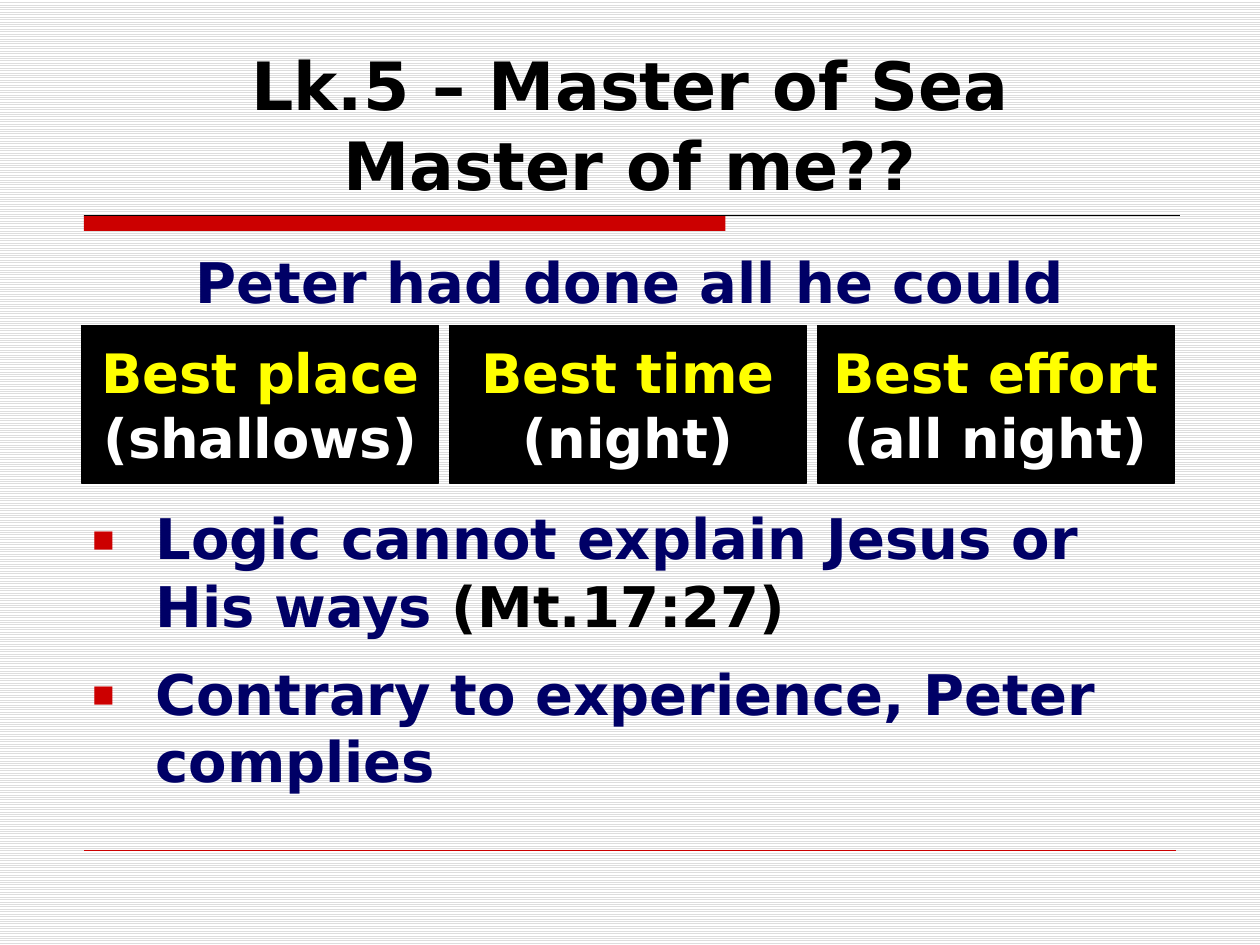
from typing import NamedTuple

from lxml.etree import SubElement
from pptx import Presentation
from pptx.dml.color import RGBColor
from pptx.enum.dml import MSO_PATTERN
from pptx.enum.shapes import MSO_CONNECTOR as CONN, MSO_SHAPE as SHAPE
from pptx.enum.text import MSO_ANCHOR as ANCHOR, PP_ALIGN as ALIGN
from pptx.oxml.ns import qn
from pptx.util import Pt

BLACK = RGBColor(0x00, 0x00, 0x00)
WHITE = RGBColor(0xFF, 0xFF, 0xFF)
STRIPE = RGBColor(0xDD, 0xDD, 0xDD)
RED = RGBColor(0xCC, 0x00, 0x00)
NAVY = RGBColor(0x00, 0x00, 0x66)
YELLOW = RGBColor(0xFF, 0xFF, 0x00)

FONT = {"name": "DejaVu Sans", "bold": True}
CARD_LEFT, CARD_TOP, CARD_PITCH = 46.6, 186, 210.2
CARD_W, CARD_H = 204, 90
HANG = 36.7


class Run(NamedTuple):
    text: str
    color: RGBColor


class Card(NamedTuple):
    best: str
    detail: str


class Bullet(NamedTuple):
    space: float
    runs: list[Run]


CARDS = [
    Card("Best place ", "(shallows)"),
    Card("Best time ", "(night)"),
    Card("Best effort ", "(all night)"),
]
BULLETS = [
    Bullet(108, [Run("Logic cannot explain Jesus or His ways ", NAVY),
                 Run("(Mt.17:27)", BLACK)]),
    Bullet(12, [Run("Contrary to experience, Peter complies", NAVY)]),
]


def add_runs(p, runs: list[Run], size: float) -> None:
    for text, color in runs:
        for i, line in enumerate(text.split("\n")):
            if i:
                p.add_line_break()
            r = p.add_run()
            r.text = line
            for key, value in (FONT | {"size": Pt(size)}).items():
                setattr(r.font, key, value)
            r.font.color.rgb = color


def add_text(s, left: float, top: float, width: float, height: float,
             anchor: ANCHOR):
    tf = s.shapes.add_textbox(Pt(left), Pt(top), Pt(width), Pt(height)).text_frame
    tf.word_wrap = True
    tf.vertical_anchor = anchor
    return tf


def add_rect(s, left: float, top: float, width: float, height: float,
             color: RGBColor):
    sp = s.shapes.add_shape(SHAPE.RECTANGLE, Pt(left), Pt(top), Pt(width), Pt(height))
    sp.shadow.inherit = False
    sp.fill.solid()
    sp.fill.fore_color.rgb = color
    sp.line.fill.background()
    return sp


def add_rule(s, left: float, right: float, y: float, color: RGBColor,
             width: float) -> None:
    cn = s.shapes.add_connector(CONN.STRAIGHT, Pt(left), Pt(y), Pt(right), Pt(y))
    cn.line.color.rgb = color
    cn.line.width = Pt(width)
    SubElement(cn._element.spPr, qn("a:effectLst"))


def add_card(s, index: int, card: Card) -> None:
    sp = add_rect(s, CARD_LEFT + index * CARD_PITCH, CARD_TOP, CARD_W, CARD_H, BLACK)
    sp.line.color.rgb = BLACK
    sp.line.width = Pt(0.75)
    tf = sp.text_frame
    tf.word_wrap = True
    tf.vertical_anchor = ANCHOR.MIDDLE
    p = tf.paragraphs[0]
    p.alignment = ALIGN.CENTER
    add_runs(p, [Run(card.best, YELLOW), Run(card.detail, WHITE)], 31)


def add_bullet(tf, bullet: Bullet) -> None:
    p = tf.add_paragraph()
    p.space_before = Pt(bullet.space)
    pPr = p._p.get_or_add_pPr()
    pPr.set("marL", str(Pt(HANG)))
    pPr.set("indent", str(-Pt(HANG)))
    SubElement(SubElement(pPr, qn("a:buClr")), qn("a:srgbClr"), val=str(RED))
    SubElement(pPr, qn("a:buSzPct"), val="65000")
    SubElement(pPr, qn("a:buFont"), typeface=FONT["name"])
    SubElement(pPr, qn("a:buChar"), char="▪")
    add_runs(p, bullet.runs, 32)


def main() -> None:
    prs = Presentation()
    prs.slide_width, prs.slide_height = Pt(720), Pt(540)
    s = prs.slides.add_slide(prs.slide_layouts[6])
    bg = s.background.fill
    bg.patterned()
    bg.pattern = MSO_PATTERN.LIGHT_HORIZONTAL
    bg.fore_color.rgb = STRIPE
    bg.back_color.rgb = WHITE

    add_rect(s, 48, 123, 366.5, 9, RED)
    add_rule(s, 48, 674.5, 123, BLACK, 0.75)
    add_rule(s, 48, 672, 486, RED, 0.25)

    title = add_text(s, 45, 24, 630, 96, ANCHOR.BOTTOM).paragraphs[0]
    title.alignment = ALIGN.CENTER
    add_runs(title, [Run("Lk.5 – Master of Sea\nMaster of me??", BLACK)], 38)

    body = add_text(s, 45, 138, 630, 360, ANCHOR.TOP)
    lead = body.paragraphs[0]
    lead.alignment = ALIGN.CENTER
    add_runs(lead, [Run("Peter had done all he could", NAVY)], 32)
    for bullet in BULLETS:
        add_bullet(body, bullet)

    for i, card in enumerate(CARDS):
        add_card(s, i, card)

    prs.save("out.pptx")


if __name__ == "__main__":
    main()
